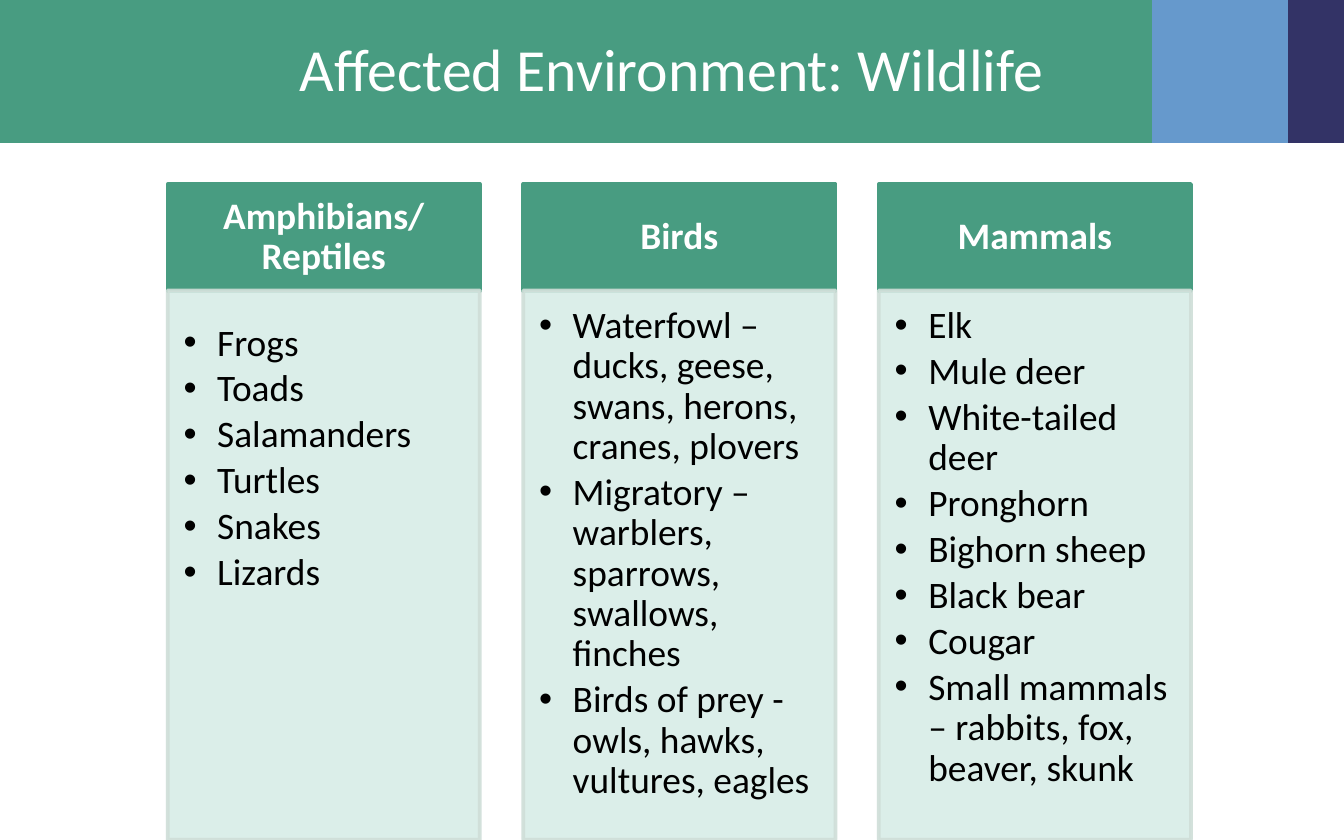
from lxml import etree
from pptx import Presentation
from pptx.dml.color import RGBColor
from pptx.enum.shapes import MSO_SHAPE
from pptx.enum.text import MSO_ANCHOR, MSO_AUTO_SIZE, PP_ALIGN
from pptx.oxml.ns import qn
from pptx.util import Cm, Pt

RECTANGLE = MSO_SHAPE.RECTANGLE
TOP, MIDDLE = MSO_ANCHOR.TOP, MSO_ANCHOR.MIDDLE
LEFT, CENTER = PP_ALIGN.LEFT, PP_ALIGN.CENTER
NO_AUTOFIT = MSO_AUTO_SIZE.NONE

FONT = "Calibri"
GREEN, BLUE, NAVY = "489C81", "6699CC", "333366"
PANEL, PANEL_EDGE = "D8EDE7", "CFDED8"
WHITE, BLACK = "FFFFFF", "000000"

# Left, width and colour of the header bands, in cm, from back to front
BANDS = [(23.95, 1.47, NAVY), (21.67, 2.67, BLUE), (0, 21.77, GREEN)]
BAND_HEIGHT = 2.7

# Column grid, in cm
COLUMN_LEFT, COLUMN_STEP, COLUMN_WIDTH = 3.17, 6.72, 5.9
HEADING_TOP, HEADING_HEIGHT = 3.48, 2.02
LIST_TOP, LIST_HEIGHT = 5.49, 10.38

# Heading, top inset of the list in cm, and list items
COLUMNS = [
    ("Amphibians/\vReptiles", 0.63,
     ["Frogs", "Toads", "Salamanders", "Turtles", "Snakes", "Lizards"]),
    ("Birds", 0.3,
     ["Waterfowl – ducks, geese, swans, herons, cranes, plovers",
      "Migratory – warblers, sparrows, swallows, finches",
      "Birds of prey - owls, hawks, vultures, eagles"]),
    ("Mammals", 0.3,
     ["Elk", "Mule deer", "White-tailed deer", "Pronghorn", "Bighorn sheep",
      "Black bear", "Cougar", "Small mammals – rabbits, fox, beaver, skunk"]),
]


def color(hex_value):
    return RGBColor.from_string(hex_value)


def add_rectangle(slide, left, top, width, height, fill, line=None):
    shape = slide.shapes.add_shape(
        RECTANGLE, Cm(left), Cm(top), Cm(width), Cm(height))
    shape.shadow.inherit = False
    shape.fill.solid()
    shape.fill.fore_color.rgb = color(fill)
    if line:
        shape.line.color.rgb = color(line)
        shape.line.width = Pt(2)
    else:
        shape.line.fill.background()
    return shape


def set_opacity(shape, percent):
    """Apply one opacity to both the fill and the outline."""
    for solid_color in shape._element.spPr.iter(qn("a:srgbClr")):
        etree.SubElement(solid_color, qn("a:alpha"), val=str(percent * 1000))


def set_frame(shape, anchor, insets):
    frame = shape.text_frame
    frame.word_wrap = True
    frame.auto_size = NO_AUTOFIT
    frame.vertical_anchor = anchor
    (frame.margin_left, frame.margin_top,
     frame.margin_right, frame.margin_bottom) = [Cm(inset) for inset in insets]
    return frame


def format_paragraph(paragraph, size, font_color, alignment, bold=False):
    paragraph.alignment = alignment
    paragraph.line_spacing = 0.9
    paragraph.font.name = FONT
    paragraph.font.size = Pt(size)
    paragraph.font.bold = bold
    paragraph.font.color.rgb = color(font_color)


def add_bullet(paragraph):
    properties = paragraph._p.get_or_add_pPr()
    properties.set("marL", str(Cm(0.635)))
    properties.set("indent", str(-Cm(0.635)))
    etree.SubElement(properties, qn("a:buFont"), typeface="Arial")
    etree.SubElement(properties, qn("a:buChar"), char="•")


def add_header(slide, text):
    for left, width, fill in BANDS:
        add_rectangle(slide, left, 0, width, BAND_HEIGHT, fill)
    title = slide.shapes.title
    title.left, title.top = Cm(1.27), Cm(0.3)
    title.width, title.height = Cm(22.86), Cm(2.12)
    frame = set_frame(title, MIDDLE, (0.25, 0.13, 0.25, 0.13))
    frame.text = text
    format_paragraph(frame.paragraphs[0], 32, WHITE, CENTER)
    # Bring the title in front of the bands
    slide.shapes._spTree.append(title._element)


def add_heading(slide, left, text):
    shape = add_rectangle(slide, left, HEADING_TOP, COLUMN_WIDTH,
                          HEADING_HEIGHT, GREEN, GREEN)
    frame = set_frame(shape, MIDDLE, (0.4, 0.23, 0.4, 0.23))
    frame.text = text
    format_paragraph(frame.paragraphs[0], 20, WHITE, CENTER, bold=True)


def add_list(slide, left, top_inset, items):
    shape = add_rectangle(slide, left, LIST_TOP, COLUMN_WIDTH,
                          LIST_HEIGHT, PANEL, PANEL_EDGE)
    set_opacity(shape, 90)
    frame = set_frame(shape, TOP, (0.3, top_inset, 0.4, 0.43))
    frame.text = "\n".join(items)
    for paragraph in frame.paragraphs:
        add_bullet(paragraph)
        format_paragraph(paragraph, 20, BLACK, LEFT)
        paragraph.space_after = Pt(3)


def main():
    presentation = Presentation()
    presentation.slide_width, presentation.slide_height = Cm(25.4), Cm(15.875)
    title_only = presentation.slide_layouts[5]
    slide = presentation.slides.add_slide(title_only)

    add_header(slide, "Affected Environment: Wildlife")
    for index, (heading, top_inset, items) in enumerate(COLUMNS):
        left = COLUMN_LEFT + index * COLUMN_STEP
        add_heading(slide, left, heading)
        add_list(slide, left, top_inset, items)

    presentation.save("out.pptx")


if __name__ == "__main__":
    main()
